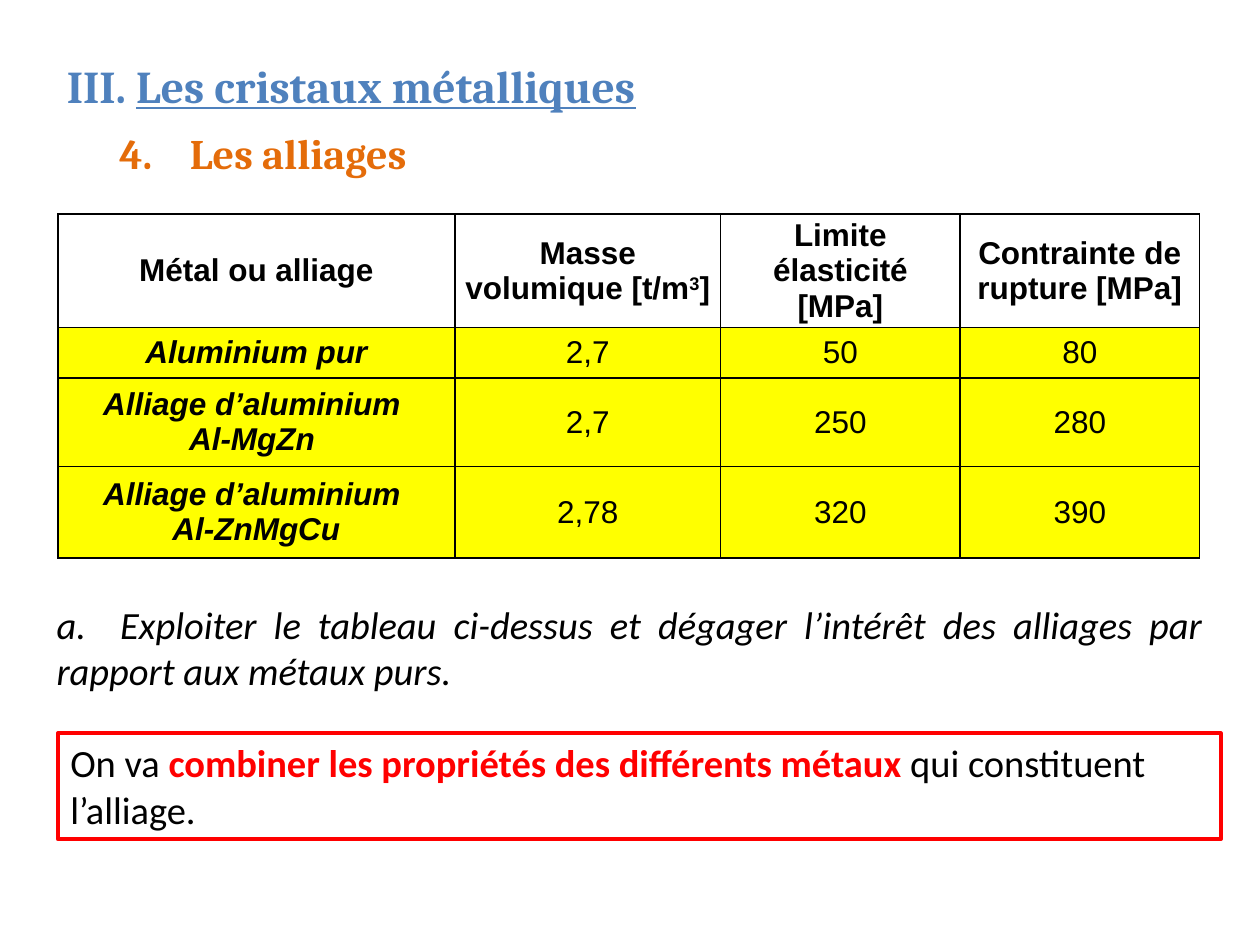
from lxml.etree import SubElement
from pptx import Presentation
from pptx.dml.color import RGBColor
from pptx.enum.shapes import MSO_SHAPE
from pptx.enum.text import MSO_ANCHOR, PP_ALIGN
from pptx.oxml.ns import qn
from pptx.util import Inches, Pt

BLACK, RED, YELLOW, BLUE, ORANGE = "000000", "FF0000", "FFFF00", "4F81BD", "E46C0A"

TITLE = [("III. ", {}), ("Les cristaux métalliques", {"underline": True})]
SUBTITLE = [("4.\tLes alliages", {})]
QUESTION = [("a.  Exploiter le tableau ci-dessus et dégager l’intérêt des alliages "
             "par rapport aux métaux purs.", {"italic": True})]
ANSWER = [
    ("On va ", {}),
    ("combiner les propriétés des différents métaux ", {"color": RED, "bold": True}),
    ("qui constituent l’alliage.", {}),
]
HEADER = ["Métal ou alliage", "Masse volumique [t/m^3^]",
          "Limite élasticité [MPa]", "Contrainte de rupture [MPa]"]
ALLOYS = [
    ["Aluminium pur", "2,7", "50", "80"],
    ["Alliage d’aluminium \nAl-MgZn ", "2,7", "250", "280"],
    ["Alliage d’aluminium \nAl-ZnMgCu", "2,78", "320", "390"],
]
COLUMN_WIDTHS = [3.15, 2.11, 1.9, 1.9]
ROW_HEIGHTS = [0.79, 0.4, 0.7, 0.73]


def rgb(color):
    return RGBColor.from_string(color)


def add_run(paragraph, text, name, size, color=BLACK, bold=False, italic=False,
            underline=False):
    run = paragraph.add_run()
    run.text = text
    font = run.font
    font.name, font.size = name, Pt(size)
    font.bold, font.italic, font.underline = bold, italic, underline
    font.color.rgb = rgb(color)
    return run


def write(shape, box, runs, align=PP_ALIGN.LEFT, margin=0, indent=0, **style):
    shape.left, shape.top, shape.width, shape.height = map(Inches, box)
    text_frame = shape.text_frame
    text_frame.word_wrap = True
    text_frame.vertical_anchor = MSO_ANCHOR.TOP
    paragraph = text_frame.paragraphs[0]
    paragraph.alignment = align
    properties = paragraph._p.get_or_add_pPr()
    properties.set("marL", str(Inches(margin)))
    properties.set("indent", str(Inches(indent)))
    for text, changes in runs:
        add_run(paragraph, text, **{**style, **changes})


def add_borders(cell):
    properties = cell._tc.get_or_add_tcPr()
    for side in ("a:lnL", "a:lnR", "a:lnT", "a:lnB"):
        line = SubElement(properties, qn(side), w=str(Pt(1)))
        fill = SubElement(line, qn("a:solidFill"))
        SubElement(fill, qn("a:srgbClr"), val=BLACK)


def fill_cell(cell, text, bold, italic, fill):
    cell.margin_left = cell.margin_right = Inches(0.07)
    cell.margin_top = cell.margin_bottom = 0
    cell.vertical_anchor = MSO_ANCHOR.MIDDLE
    add_borders(cell)
    if fill:
        cell.fill.solid()
        cell.fill.fore_color.rgb = rgb(fill)
    else:
        cell.fill.background()
    for number, line in enumerate(text.split("\n")):
        text_frame = cell.text_frame
        paragraph = text_frame.add_paragraph() if number else text_frame.paragraphs[0]
        paragraph.alignment = PP_ALIGN.CENTER
        for position, part in enumerate(line.split("^")):
            run = add_run(paragraph, part, "Arial", 18, bold=bold, italic=italic)
            if position % 2:
                run._r.get_or_add_rPr().set("baseline", "30000")


def add_alloy_table(slide):
    rows = [HEADER] + ALLOYS
    table = slide.shapes.add_table(
        len(rows), len(HEADER), Inches(0.46), Inches(1.7),
        Inches(sum(COLUMN_WIDTHS)), Inches(sum(ROW_HEIGHTS))).table
    table.first_row = table.horz_banding = False
    for column, width in zip(table.columns, COLUMN_WIDTHS):
        column.width = Inches(width)
    for row, height in zip(table.rows, ROW_HEIGHTS):
        row.height = Inches(height)
    for i, texts in enumerate(rows):
        for j, text in enumerate(texts):
            fill_cell(table.cell(i, j), text, bold=i == 0 or j == 0,
                      italic=i > 0 and j == 0, fill=YELLOW if i else None)


def main():
    presentation = Presentation()
    presentation.slide_width, presentation.slide_height = Inches(10), Inches(7.5)
    slide = presentation.slides.add_slide(presentation.slide_layouts[5])
    shapes = slide.shapes

    write(shapes.title, (0.43, 0.41, 9.06, 0.55), TITLE, margin=0.44, indent=-0.44,
          name="Cambria", size=26, color=BLUE, bold=True)
    write(shapes.add_textbox(0, 0, 0, 0), (0.35, 0.96, 9.06, 0.5), SUBTITLE,
          margin=1.06, indent=-0.56, name="Cambria", size=24, color=ORANGE, bold=True)
    add_alloy_table(slide)
    write(shapes.add_textbox(0, 0, 0, 0), (0.35, 4.72, 9.29, 0.84), QUESTION,
          align=PP_ALIGN.JUSTIFY, name="Calibri", size=22)

    answer = shapes.add_shape(MSO_SHAPE.RECTANGLE, 0, 0, 0, 0)
    answer.shadow.inherit = False
    answer.fill.background()
    answer.line.color.rgb = rgb(RED)
    answer.line.width = Pt(2.25)
    write(answer, (0.46, 5.82, 9.23, 0.84), ANSWER, name="Calibri", size=22)

    presentation.save("out.pptx")


if __name__ == "__main__":
    main()
